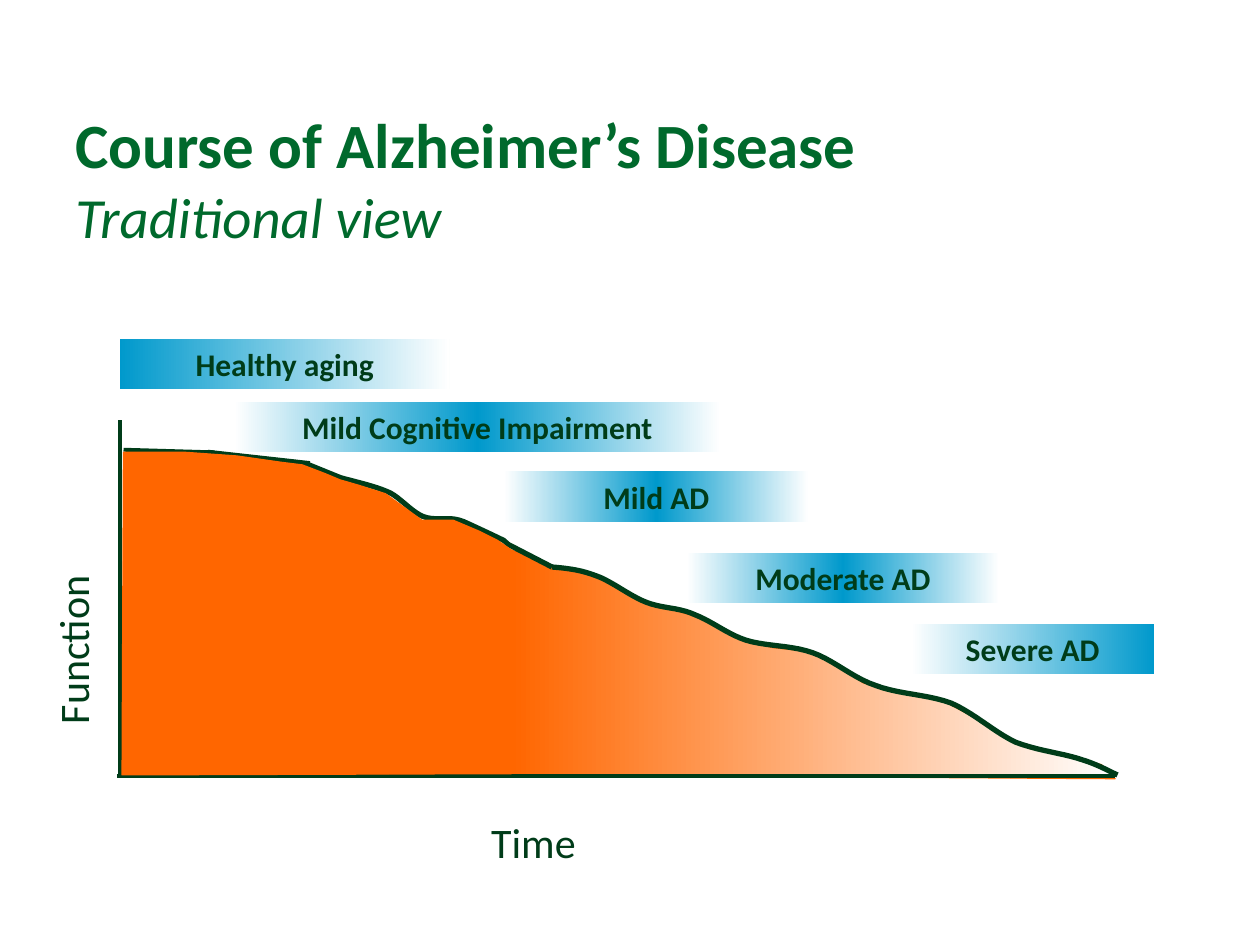
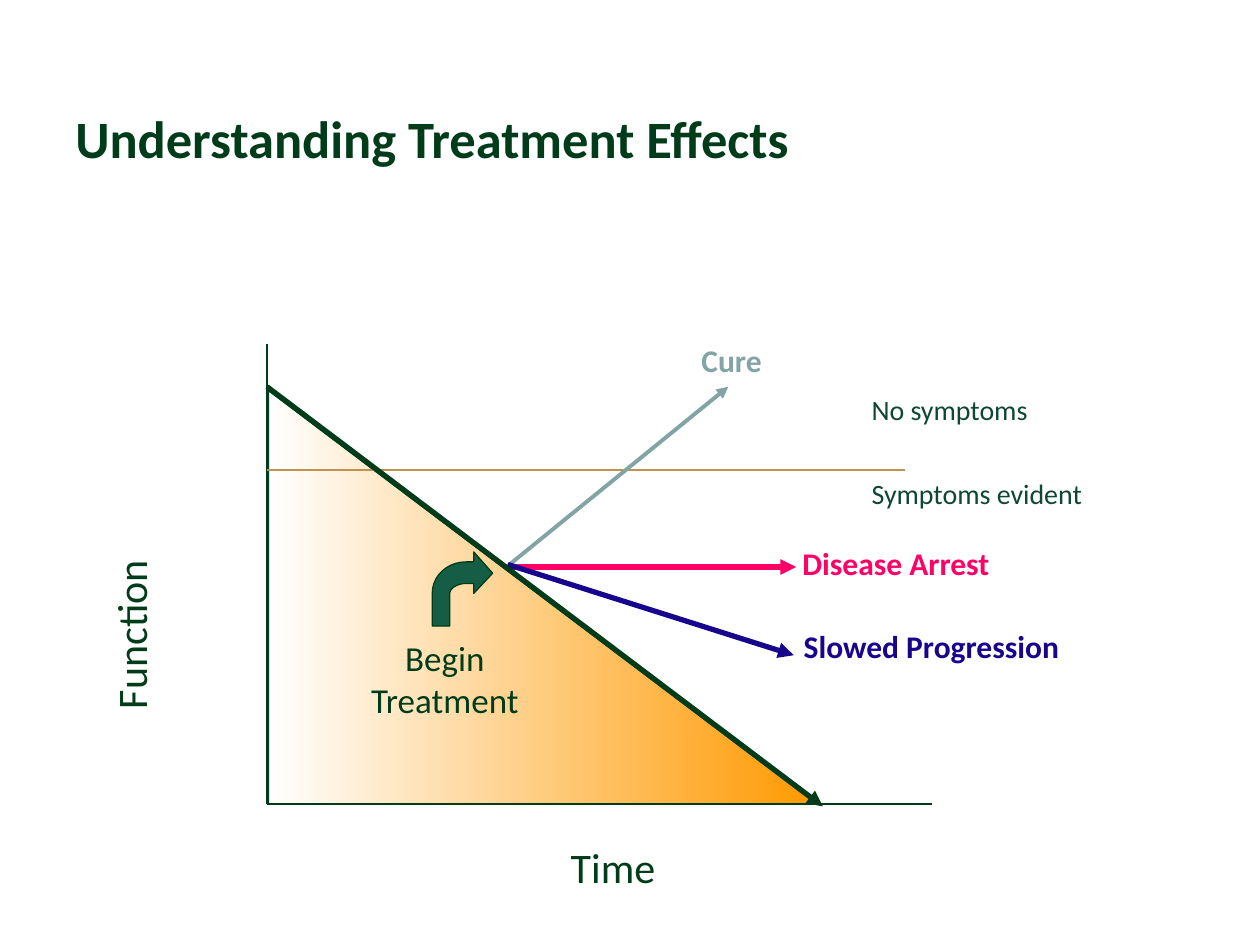
from dataclasses import dataclass

from lxml.etree import SubElement
from pptx import Presentation
from pptx.dml.color import RGBColor as RGB
from pptx.enum.shapes import MSO_CONNECTOR as Link, MSO_SHAPE as Kind
from pptx.enum.text import MSO_ANCHOR as Anchor, PP_ALIGN as Align
from pptx.oxml.ns import qn
from pptx.util import Pt


@dataclass(frozen=True)
class Theme:
    font: str = "Calibri"
    ink: str = "003C19"
    green: str = "00692C"
    pine: str = "104634"
    leaf: str = "155E45"
    blue: str = "0099CC"
    white: str = "FFFFFF"
    orange: str = "FF6600"
    amber: str = "FF9900"
    tan: str = "C0914F"
    sage: str = "83A4A5"
    pink: str = "FF0066"
    navy: str = "18058D"
    head: float = 36
    sub: float = 32.4
    title: float = 30
    axis: float = 24
    step: float = 20
    label: float = 18
    note: float = 16
    thin: float = 0.75
    mid: float = 2.25
    bold: float = 3


T = Theme()
FADE = [(0, T.white), (50, T.blue), (100, T.white)]

BARS = [
    ("Healthy aging", 68.4, 193.7, 188.6, [(0, T.blue), (100, T.white)]),
    ("Mild AD", 288, 269.3, 174.2, FADE),
    ("Moderate AD", 392.4, 316.1, 178.6, FADE),
    ("Severe AD", 520.6, 356.4, 139, [(0, T.white), (100, T.blue)]),
]

LATE_AREA = [
    (293, 314.6), (314.6, 323.3), (332.6, 326.9), (345.6, 331.2), (363.6, 342),
    (389.5, 349.9), (404.6, 354.2), (422.6, 365), (441.4, 370.1), (462.2, 372.2),
    (478.8, 380.2), (493.2, 390.2), (509.8, 395.3), (529.2, 398.2), (541.4, 401.8),
    (560.2, 411.8), (573.8, 421.2), (588.2, 427.7), (606.2, 431.3), (629.3, 437),
    (637.2, 445), (292.3, 442.8),
]
EARLY_AREA = [
    (70.6, 258.5), (105.8, 258.5), (135.4, 260.6), (160.6, 264.2), (172.8, 265.7),
    (185.8, 270.7), (194.4, 274.3), (204.5, 277.2), (220.3, 282.2), (236.2, 293.8),
    (241.2, 297.4), (259.2, 297.4), (274.3, 303.8), (284.4, 308.9), (293.8, 315.4),
    (293.8, 322.6), (292.3, 442.1), (69.8, 442.8),
]
EARLY_CURVE = [
    (175, 265), (194.4, 272.9),
    (201.6, 275, 212.4, 277.2, 221, 280.8),
    (227.5, 283, 234.7, 292.3, 241.9, 295.2),
    (249.8, 298.1, 256.3, 294.5, 265, 298.1),
    (271.4, 301, 283.7, 306.7, 288, 308.9),
    (290.2, 311), (315.4, 324),
]
LATE_CURVE = [
    (315.4, 324),
    (323.3, 324.7, 331.2, 325.4, 340.6, 329),
    (349.2, 331.9, 360, 340.6, 369.4, 344.2),
    (378.7, 347.8, 388.1, 347, 397.4, 351.4),
    (406.8, 355, 415.4, 362.2, 426.2, 365.8),
    (437.8, 369.4, 452.2, 368.6, 464.4, 373),
    (476.6, 377.3, 487.4, 387.4, 500.4, 391.7),
    (513.4, 396.7, 529.9, 396.7, 543.6, 401.8),
    (556.6, 407.5, 568.1, 418.3, 580.3, 424.1),
    (593.3, 429.1, 608.4, 430.6, 618.5, 434.2),
    (627.8, 437, 635, 441.4, 638.6, 442.8),
]
BENT_ARROW = [
    (281.5, 327.6), (270.7, 315.4), (270.7, 321.1), (266.4, 321.1),
    (255.6, 321.1, 247, 329, 247, 339.1),
    (247, 357.8), (257, 357.8), (257, 339.1),
    (257, 336.2, 261.4, 333.4, 266.4, 333.4),
    (270.7, 333.4), (270.7, 339.1),
]


def trace(parts, steps=10):
    points = [parts[0]]
    for part in parts[1:]:
        if len(part) == 2:
            points.append(part)
            continue
        start = points[-1]
        ctrl = [start, part[:2], part[2:4], part[4:]]
        for i in range(1, steps + 1):
            t = i / steps
            u = 1 - t
            mix = (u ** 3, 3 * u * u * t, 3 * u * t * t, t ** 3)
            points.append(tuple(sum(m * c[k] for m, c in zip(mix, ctrl)) for k in (0, 1)))
    return points


def paint(shape, fill=None, line=None, width=T.thin):
    shape.shadow.inherit = False
    if fill is None:
        shape.fill.background()
    elif isinstance(fill, str):
        shape.fill.solid()
        shape.fill.fore_color.rgb = RGB.from_string(fill)
    else:
        shape.fill.gradient()
        shape.fill.gradient_angle = 0
        stops = shape.element.spPr.find(qn("a:gradFill")).find(qn("a:gsLst"))
        for old in list(stops):
            stops.remove(old)
        for place, color in fill:
            stop = SubElement(stops, qn("a:gs"), pos=str(place * 1000))
            SubElement(stop, qn("a:srgbClr"), val=color)
    if line:
        shape.line.color.rgb = RGB.from_string(line)
        shape.line.width = Pt(width)
    else:
        shape.line.fill.background()


def add_run(para, text, size, color, bold=False, slant=False):
    run = para.add_run()
    run.text = text
    font = run.font
    font.name = T.font
    font.size = Pt(size)
    font.bold = bold
    font.italic = slant
    font.color.rgb = RGB.from_string(color)


def add_text(slide, box, *lines, align=Align.LEFT, turn=0):
    shape = slide.shapes.add_textbox(*map(Pt, box))
    shape.rotation = turn
    frame = shape.text_frame
    frame.word_wrap = True
    frame.vertical_anchor = Anchor.TOP
    para = frame.paragraphs[0]
    para.alignment = align
    for i, line in enumerate(lines):
        if i:
            para.add_line_break()
        add_run(para, *line)


def add_title(slide, *lines):
    add_text(slide, (36, 56.9, 648, 77), *lines)


def add_axes(slide, side, foot, align):
    add_text(slide, (*side, 175, 36), ("Function", T.axis, T.ink), turn=270)
    add_text(slide, (*foot, 192.2, 36), ("Time", T.axis, T.ink), align=align)


def add_bar(slide, name, left, top, width, stops):
    bar = slide.shapes.add_shape(Kind.RECTANGLE, Pt(left), Pt(top), Pt(width), Pt(28.8))
    paint(bar, stops)
    frame = bar.text_frame
    frame.word_wrap = True
    frame.vertical_anchor = Anchor.MIDDLE
    para = frame.paragraphs[0]
    para.alignment = Align.CENTER
    add_run(para, name, T.label, T.ink, True)


def add_line(slide, start, end, color, width, arrow=False):
    line = slide.shapes.add_connector(Link.STRAIGHT, *map(Pt, (*start, *end)))
    line.line.color.rgb = RGB.from_string(color)
    line.line.width = Pt(width)
    props = line.element.spPr
    if arrow:
        SubElement(props.find(qn("a:ln")), qn("a:tailEnd"), type="triangle")
    SubElement(props, qn("a:effectLst"))


def add_form(slide, parts, fill=None, line=T.ink, width=T.thin):
    first, *rest = [(Pt(x), Pt(y)) for x, y in trace(parts)]
    form = slide.shapes.build_freeform(*first)
    form.add_line_segments(rest, close=fill is not None)
    paint(form.convert_to_shape(), fill, line, width)


def draw_course(slide):
    add_bar(slide, "Mild Cognitive Impairment", 133.9, 229.7, 277.9, FADE)
    add_title(slide, ("Course of Alzheimer’s Disease", T.head, T.green, True),
              ("Traditional view", T.sub, T.green, False, True))
    add_form(slide, LATE_AREA, [(0, T.orange), (100, T.white)], T.orange)
    add_line(slide, (67, 443.5), (637.2, 443.5), T.ink, T.mid)
    add_line(slide, (68.4, 443.5), (68.4, 239.8), T.ink, T.mid)
    add_line(slide, (118.8, 258.5), (177.1, 265), T.ink, T.bold)
    for curve in (EARLY_CURVE, LATE_CURVE):
        add_form(slide, curve, width=T.bold)
    add_axes(slide, (-46.1, 315.4), (273.6, 463), Align.LEFT)
    for bar in BARS:
        add_bar(slide, *bar)
    add_line(slide, (122.4, 258.5), (70.6, 257), T.ink, T.mid)
    add_form(slide, EARLY_AREA, T.orange, T.orange)


def draw_effects(slide):
    wedge = slide.shapes.add_shape(Kind.RIGHT_TRIANGLE, Pt(153.4), Pt(223.2), Pt(313.2), Pt(236.2))
    paint(wedge, [(0, T.white), (100, T.amber)], T.ink)
    corner = (152.6, 459.4)
    add_line(slide, (152.6, 196.6), corner, T.ink, T.thin)
    add_line(slide, corner, (532.8, 459.4), T.ink, T.thin)
    add_axes(slide, (-13, 306.7), (254.2, 477.4), Align.CENTER)
    add_line(slide, (152.6, 268.6), (517, 268.6), T.tan, T.thin)
    add_line(slide, (289.4, 324), (416.2, 221), T.sage, T.mid, True)
    add_text(slide, (203.8, 360, 100.8, 55.4), ("Begin Treatment", T.step, T.ink),
             align=Align.CENTER)
    add_form(slide, BENT_ARROW, T.leaf)
    add_line(slide, (290.2, 324), (455, 324), T.pink, T.bold, True)
    add_line(slide, (290.2, 322.6), (453.6, 374.4), T.navy, T.bold, True)
    for name, left, top, width, color in (
        ("Disease Arrest", 451.4, 307.4, 162, T.pink),
        ("Slowed Progression", 452.2, 355, 201.6, T.navy),
        ("Cure", 393.8, 191.5, 139, T.sage),
    ):
        add_text(slide, (left, top, width, 28.8), (name, T.label, color, True))
    add_line(slide, (152.6, 221), (470.2, 460.8), T.ink, T.bold, True)
    for name, top in (("No symptoms", 221), ("Symptoms evident", 268.6)):
        add_text(slide, (491, top, 203.8, 26.6), (name, T.note, T.pine))
    add_title(slide, ("Understanding Treatment Effects", T.title, T.ink, True))


def main():
    deck = Presentation()
    deck.slide_width, deck.slide_height = Pt(720), Pt(540)
    for draw in (draw_course, draw_effects):
        draw(deck.slides.add_slide(deck.slide_layouts[6]))
    deck.save("out.pptx")


if __name__ == "__main__":
    main()
